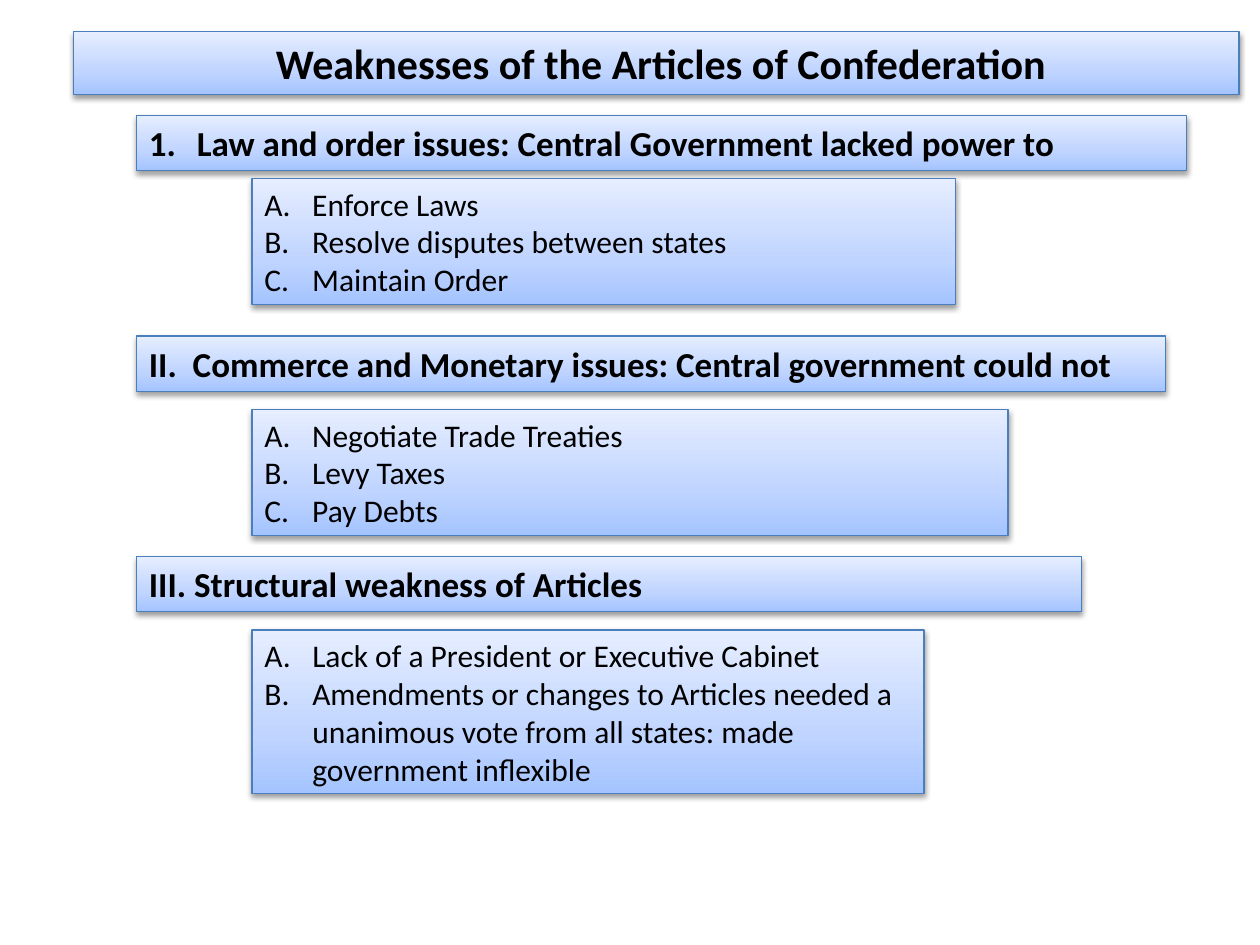
import pptx
import pptx.dml.color
import pptx.enum.shapes
import pptx.enum.text
import pptx.oxml
import pptx.oxml.ns
import pptx.util
from dataclasses import dataclass

TITLE = " Weaknesses of the Articles of Confederation"
SECTIONS = [
    {"heading": "Law and order issues: Central Government lacked power to",
     "numbering": "arabicPeriod", "heading_columns": 100, "list_columns": 67, "list_row": 6,
     "points": ["Enforce Laws", "Resolve disputes between states", "Maintain Order"],
     "lines": 3},
    {"heading": "II.  Commerce and Monetary issues: Central government could not",
     "numbering": None, "heading_columns": 98, "list_columns": 72, "list_row": 7,
     "points": ["Negotiate Trade Treaties", "Levy Taxes", "Pay Debts"],
     "lines": 3},
    {"heading": "III. Structural weakness of Articles",
     "numbering": None, "heading_columns": 90, "list_columns": 64, "list_row": 7,
     "points": ["Lack of a President or Executive Cabinet",
                "Amendments or changes to Articles needed a unanimous vote from all states: "
                "made government inflexible"],
     "lines": 4},
]


@dataclass(frozen=True)
class Theme:
    font: str = "Calibri"
    text: str = "000000"
    border: str = "4B7EBC"
    gradient: tuple = ((0, "A4C4FF"), (35, "BFD4FF"), (100, "E6EEFF"))
    title_size: int = 24
    heading_size: int = 20
    point_size: int = 18


THEME = Theme()
CELL = 1 / 12
TITLE_COLUMN, HEADING_COLUMN, LIST_COLUMN = 7, 13, 24
TITLE_ROW, FIRST_ROW, SECTION_ROWS = 3, 11, 21
TITLE_COLUMNS = 111
TITLE_HEIGHT, HEADING_HEIGHT = 0.5, 0.44
LINE_HEIGHT, PADDING = 0.3, 0.1
INDENT = 0.38


def drawing(markup):
    return pptx.oxml.parse_xml(markup.replace(">", f" {pptx.oxml.ns.nsdecls('a')}>", 1))


def style_panel(shape):
    shape.fill.gradient()
    properties = shape.element.spPr
    stops = "".join(f'<a:gs pos="{position * 1000}"><a:srgbClr val="{color}"/></a:gs>'
                    for position, color in THEME.gradient)
    properties.replace(
        properties.find(pptx.oxml.ns.qn("a:gradFill")),
        drawing(f'<a:gradFill rotWithShape="1"><a:gsLst>{stops}</a:gsLst>'
                '<a:lin ang="16200000" scaled="0"/></a:gradFill>'))
    shape.line.color.rgb = pptx.dml.color.RGBColor.from_string(THEME.border)
    shape.line.width = pptx.util.Pt(0.75)
    properties.append(drawing(
        '<a:effectLst><a:outerShdw blurRad="40000" dist="20000" dir="5400000" rotWithShape="0">'
        '<a:srgbClr val="000000"><a:alpha val="38000"/></a:srgbClr>'
        '</a:outerShdw></a:effectLst>'))


def write_text(shape, texts, *, size, bold=False, centered=False, numbering=None):
    frame = shape.text_frame
    frame.word_wrap = True
    frame.vertical_anchor = pptx.enum.text.MSO_ANCHOR.TOP
    frame.auto_size = pptx.enum.text.MSO_AUTO_SIZE.SHAPE_TO_FIT_TEXT
    alignments = pptx.enum.text.PP_ALIGN
    for index, text in enumerate(texts):
        paragraph = frame.add_paragraph() if index else frame.paragraphs[0]
        paragraph.alignment = alignments.CENTER if centered else alignments.LEFT
        run = paragraph.add_run()
        run.text = text
        run.font.name = THEME.font
        run.font.size = pptx.util.Pt(size)
        run.font.bold = bold
        run.font.color.rgb = pptx.dml.color.RGBColor.from_string(THEME.text)
        if numbering:
            properties = paragraph._p.get_or_add_pPr()
            indent = pptx.util.Inches(INDENT)
            properties.set("marL", str(indent))
            properties.set("indent", str(-indent))
            properties.append(drawing('<a:buFont typeface="+mj-lt"></a:buFont>'))
            properties.append(drawing(f'<a:buAutoNum type="{numbering}"></a:buAutoNum>'))


def add_panel(slide, texts, column, row, columns, height, **text_format):
    shape = slide.shapes.add_shape(
        pptx.enum.shapes.MSO_SHAPE.RECTANGLE,
        *(pptx.util.Inches(length)
          for length in (column * CELL, row * CELL, columns * CELL, height)))
    style_panel(shape)
    write_text(shape, texts, **text_format)


def main():
    presentation = pptx.Presentation()
    presentation.slide_width = pptx.util.Inches(10)
    presentation.slide_height = pptx.util.Inches(7.5)
    slide = presentation.slides.add_slide(presentation.slide_layouts[6])
    add_panel(slide, [TITLE], TITLE_COLUMN, TITLE_ROW, TITLE_COLUMNS, TITLE_HEIGHT,
              size=THEME.title_size, bold=True, centered=True)
    for index, section in enumerate(SECTIONS):
        row = FIRST_ROW + index * SECTION_ROWS
        add_panel(slide, [section["heading"]], HEADING_COLUMN, row,
                  section["heading_columns"], HEADING_HEIGHT,
                  size=THEME.heading_size, bold=True, numbering=section["numbering"])
        add_panel(slide, section["points"], LIST_COLUMN, row + section["list_row"],
                  section["list_columns"], PADDING + section["lines"] * LINE_HEIGHT,
                  size=THEME.point_size, numbering="alphaUcPeriod")
    presentation.save("out.pptx")


if __name__ == "__main__":
    main()
